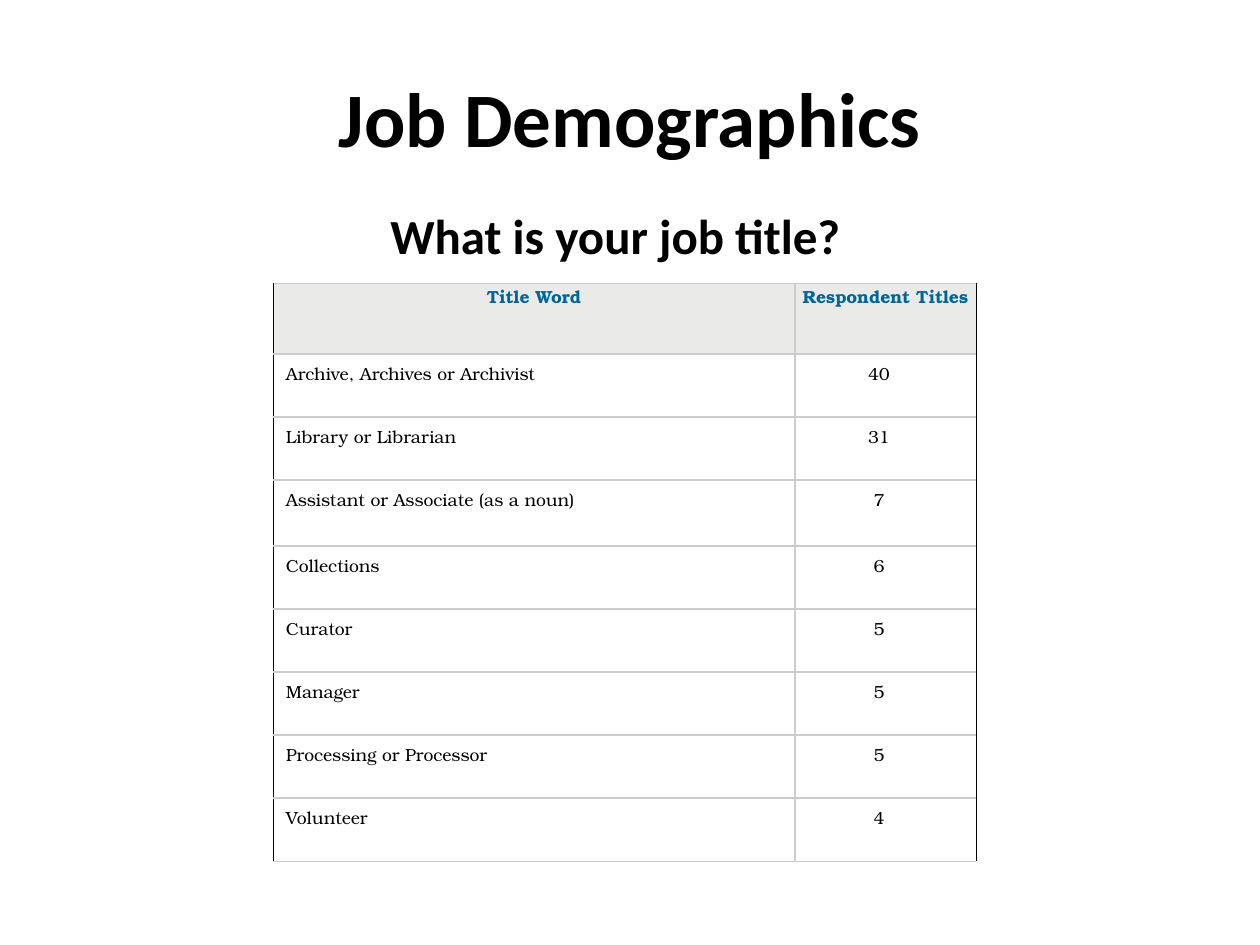
"""Build the job demographics slide with its table of title words."""
import dataclasses

import lxml.etree
import pptx
import pptx.dml.color
import pptx.enum.text
import pptx.oxml.ns
import pptx.util

EMU_PER_PX = 914400 / 126
COLORS = {"text": "000000", "heading": "006699", "header": "EAEAE8", "body": "FFFFFF", "grid": "CCCCCC"}
ALIGN = pptx.enum.text.PP_ALIGN
COLUMN_WIDTHS = (522, 181)
ROW_HEIGHTS = (71, 63, 63, 66, 63, 63, 63, 63, 63)
ROWS = (
    ("Title Word", "Respondent Titles"),
    ("Archive, Archives or Archivist", "40"),
    ("Library or Librarian", "31"),
    ("Assistant or Associate (as a noun)", "7"),
    ("Collections", "6"),
    ("Curator", "5"),
    ("Manager", "5"),
    ("Processing or Processor", "5"),
    ("Volunteer", "4"),
)


@dataclasses.dataclass(frozen=True)
class Box:
    left: int
    top: int
    width: int
    height: int


@dataclasses.dataclass(frozen=True)
class TextStyle:
    font: str
    size: int
    color: str
    bold: bool
    align: ALIGN


@dataclasses.dataclass(frozen=True)
class CellStyle:
    text: TextStyle
    fill: str
    margins: tuple[int, int, int, int]


TITLE = TextStyle("Calibri", 44, "text", True, ALIGN.CENTER)
QUESTION = TextStyle("Calibri", 28, "text", True, ALIGN.LEFT)
HEADING = TextStyle("TeX Gyre Bonum", 10, "heading", True, ALIGN.CENTER)
LABEL = TextStyle("TeX Gyre Bonum", 10, "text", False, ALIGN.LEFT)
COUNT = dataclasses.replace(LABEL, align=ALIGN.CENTER)
HEADER_CELL = CellStyle(HEADING, "header", (0, 0, 0, 0))
BODY_CELLS = tuple(CellStyle(text, "body", (13, 8, 26, 8)) for text in (LABEL, COUNT))


def px(length: int) -> pptx.util.Emu:
    """Turn pixels into EMU."""
    return pptx.util.Emu(round(length * EMU_PER_PX))


def rgb(name: str) -> pptx.dml.color.RGBColor:
    """Look up a named colour."""
    return pptx.dml.color.RGBColor.from_string(COLORS[name])


def place(shape, box: Box) -> None:
    """Move and size a shape."""
    shape.left, shape.top = px(box.left), px(box.top)
    shape.width, shape.height = px(box.width), px(box.height)


def write(text_frame, text: str, style: TextStyle) -> None:
    """Set one styled paragraph."""
    text_frame.text = text
    paragraph = text_frame.paragraphs[0]
    paragraph.alignment = style.align
    for run in paragraph.runs:
        run.font.name = style.font
        run.font.size = pptx.util.Pt(style.size)
        run.font.bold = style.bold
        run.font.color.rgb = rgb(style.color)


def add_border(cell, position: int, side: str, outer: bool) -> None:
    """Draw one cell edge, thin on the outside and black at the sides."""
    color = "text" if outer and side in "LR" else "grid"
    width = pptx.util.Pt(0.25 if outer else 1)
    line = lxml.etree.Element(pptx.oxml.ns.qn(f"a:ln{side}"), w=str(width))
    fill = lxml.etree.SubElement(line, pptx.oxml.ns.qn("a:solidFill"))
    lxml.etree.SubElement(fill, pptx.oxml.ns.qn("a:srgbClr"), val=COLORS[color])
    cell._tc.get_or_add_tcPr().insert(position, line)


def format_cell(cell, text: str, style: CellStyle) -> None:
    """Fill a cell and write its text."""
    cell.fill.solid()
    cell.fill.fore_color.rgb = rgb(style.fill)
    cell.margin_left, cell.margin_top, cell.margin_right, cell.margin_bottom = map(px, style.margins)
    write(cell.text_frame, text, style.text)
    cell.text_frame.paragraphs[0].space_after = pptx.util.Pt(14)


def add_title_table(slide, left: int, top: int) -> None:
    """Add the table of title words and counts."""
    box = Box(left, top, sum(COLUMN_WIDTHS), sum(ROW_HEIGHTS))
    frame = slide.shapes.add_table(len(ROWS), len(COLUMN_WIDTHS), 0, 0, px(box.width), px(box.height))
    place(frame, box)
    table = frame.table
    for column, width in zip(table.columns, COLUMN_WIDTHS):
        column.width = px(width)
    for row, height in zip(table.rows, ROW_HEIGHTS):
        row.height = px(height)
    last_row, last_column = len(ROWS) - 1, len(COLUMN_WIDTHS) - 1
    for row_index, texts in enumerate(ROWS):
        for column_index, text in enumerate(texts):
            cell = table.cell(row_index, column_index)
            format_cell(cell, text, BODY_CELLS[column_index] if row_index else HEADER_CELL)
            outer_sides = {
                "L": column_index == 0,
                "R": column_index == last_column,
                "T": row_index == 0,
                "B": row_index == last_row,
            }
            for position, (side, outer) in enumerate(outer_sides.items()):
                add_border(cell, position, side, outer)


def main() -> None:
    """Build and save the presentation."""
    presentation = pptx.Presentation()
    presentation.slide_width, presentation.slide_height = px(1260), px(945)
    slide = presentation.slides.add_slide(presentation.slide_layouts[5])
    title = slide.shapes.title
    place(title, Box(63, 38, 1134, 158))
    write(title.text_frame, "Job Demographics", TITLE)
    title.text_frame.vertical_anchor = pptx.enum.text.MSO_ANCHOR.MIDDLE
    add_title_table(slide, 273, 283)
    question = slide.shapes.add_textbox(0, 0, 0, 0)
    place(question, Box(378, 199, 484, 72))
    question.text_frame.word_wrap = True
    question.text_frame.auto_size = pptx.enum.text.MSO_AUTO_SIZE.SHAPE_TO_FIT_TEXT
    write(question.text_frame, "What is your job title?", QUESTION)
    presentation.save("out.pptx")


if __name__ == "__main__":
    main()
